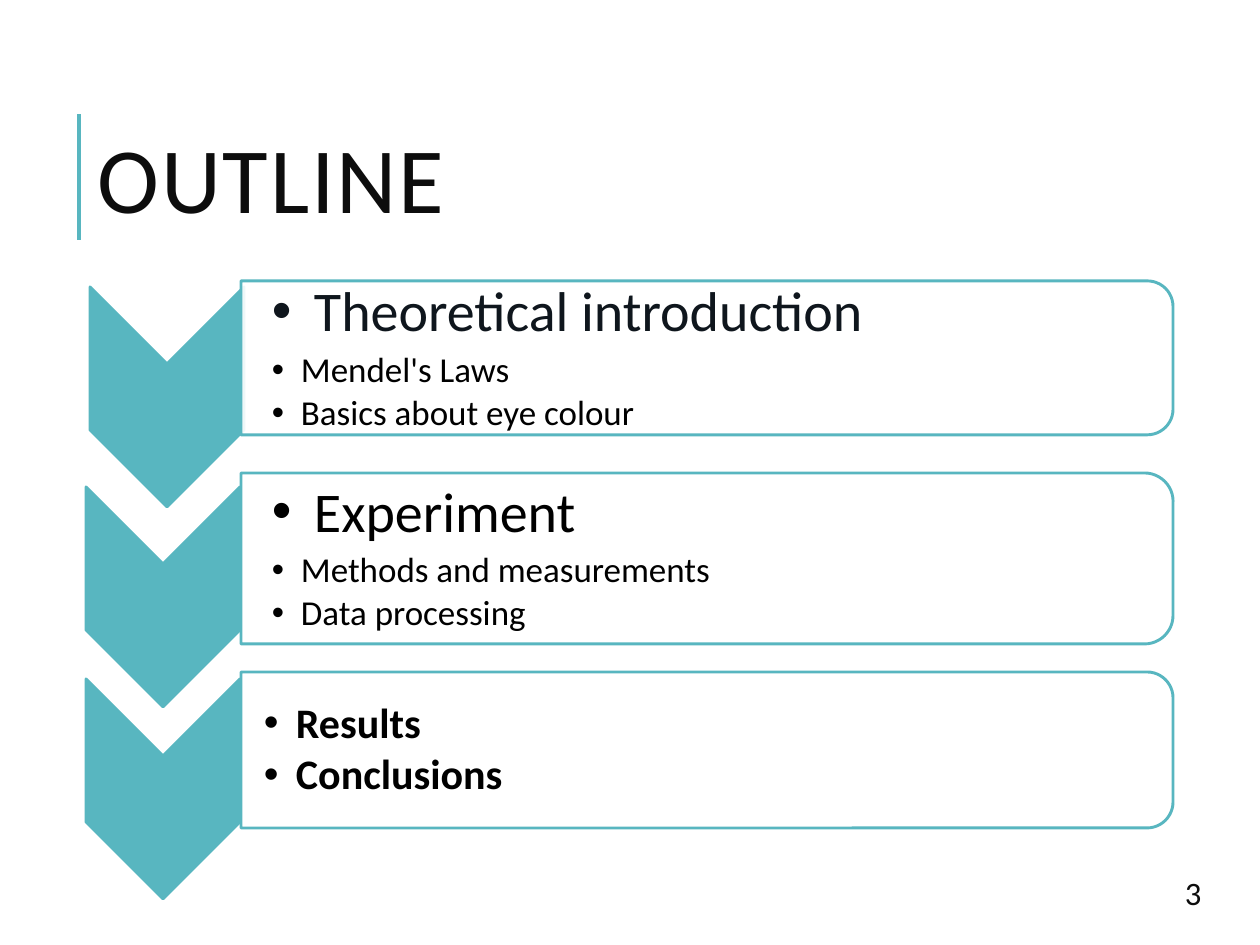
from dataclasses import dataclass

import lxml.etree
import pptx
import pptx.dml.color
import pptx.enum.shapes
import pptx.enum.text
import pptx.oxml.ns
import pptx.util

EMU_PER_PX = 914400 / 168
TEAL = pptx.dml.color.RGBColor(0x58, 0xB6, 0xC0)
WHITE = pptx.dml.color.RGBColor(0xFF, 0xFF, 0xFF)
BLACK = pptx.dml.color.RGBColor(0x00, 0x00, 0x00)
NEAR_BLACK = pptx.dml.color.RGBColor(0x0D, 0x0D, 0x0D)
NAVY_BLACK = pptx.dml.color.RGBColor(0x0F, 0x16, 0x1D)
FONT = "Calibri"
CARD_LEFT, CARD_WIDTH = 241, 932
CHEVRON_WIDTH, CHEVRON_HEIGHT = 154, 220


@dataclass
class Box:
    left: int
    top: int
    width: int
    height: int


@dataclass
class Bullet:
    text: str
    size: int
    indent: int
    color: pptx.dml.color.RGBColor = BLACK
    bold: bool = False


@dataclass
class Section:
    chevron_left: int
    chevron_top: int
    card_top: int
    card_height: int
    text_top: int
    text_height: int
    text_inset: int
    bullets: list[Bullet]


SECTIONS = [
    Section(90, 287, 281, 154, 289, 139, 32, [
        Bullet("Theoretical introduction", 24, 42, NAVY_BLACK),
        Bullet("Mendel's Laws", 15, 29),
        Bullet("Basics about eye colour", 15, 29),
    ]),
    Section(86, 487, 473, 171, 481, 155, 32, [
        Bullet("Experiment", 24, 42),
        Bullet("Methods and measurements", 15, 29),
        Bullet("Data processing", 15, 29),
    ]),
    Section(86, 679, 672, 156, 680, 141, 24, [
        Bullet("Results", 18, 32, bold=True),
        Bullet("Conclusions", 18, 32, bold=True),
    ]),
]


def px(length: float) -> pptx.util.Emu:
    return pptx.util.Emu(round(length * EMU_PER_PX))


def add_child(parent, tag: str, **attributes: str):
    return lxml.etree.SubElement(parent, pptx.oxml.ns.qn(tag), attributes)


def add_turned_shape(slide, preset, seen: Box, fill: pptx.dml.color.RGBColor):
    """Add a shape turned a quarter clockwise so that it covers the box seen."""
    shift = (seen.width - seen.height) / 2
    shape = slide.shapes.add_shape(
        preset, px(seen.left + shift), px(seen.top - shift), px(seen.height), px(seen.width))
    shape.rotation = 90
    shape.shadow.inherit = False
    shape.fill.solid()
    shape.fill.fore_color.rgb = fill
    shape.line.color.rgb = TEAL
    shape.line.width = pptx.util.Pt(1.25)
    return shape


def add_text_frame(slide, box: Box, insets: tuple[int, int], anchor):
    """Add a text box; insets are the left one and the one for the other sides."""
    frame = slide.shapes.add_textbox(
        px(box.left), px(box.top), px(box.width), px(box.height)).text_frame
    frame.word_wrap = True
    frame.vertical_anchor = anchor
    frame.margin_left = px(insets[0])
    frame.margin_top = frame.margin_right = frame.margin_bottom = px(insets[1])
    return frame


def style_font(paragraph, size: int, color: pptx.dml.color.RGBColor, bold: bool = False) -> None:
    paragraph.font.name = FONT
    paragraph.font.size = pptx.util.Pt(size)
    paragraph.font.color.rgb = color
    paragraph.font.bold = bold


def write_bullet(paragraph, bullet: Bullet) -> None:
    paragraph.text = bullet.text
    paragraph.line_spacing = 0.9
    paragraph.space_after = pptx.util.Pt(0.15 * bullet.size)
    properties = paragraph._p.get_or_add_pPr()
    properties.set("marL", str(px(bullet.indent)))
    properties.set("indent", str(px(-bullet.indent)))
    add_child(properties, "a:buFont", typeface="Arial")
    add_child(properties, "a:buChar", char="•")
    style_font(paragraph, bullet.size, bullet.color, bullet.bold)


def add_section(slide, section: Section) -> None:
    presets = pptx.enum.shapes.MSO_SHAPE
    chevron = Box(section.chevron_left, section.chevron_top, CHEVRON_WIDTH, CHEVRON_HEIGHT)
    add_turned_shape(slide, presets.CHEVRON, chevron, TEAL)

    card_box = Box(CARD_LEFT, section.card_top, CARD_WIDTH, section.card_height)
    card = add_turned_shape(slide, presets.ROUND_2_SAME_RECTANGLE, card_box, WHITE)
    card_color = card._element.spPr.find(".//" + pptx.oxml.ns.qn("a:srgbClr"))
    add_child(card_color, "a:alpha", val="90000")

    text_box = Box(240, section.text_top, 926, section.text_height)
    frame = add_text_frame(
        slide, text_box, (section.text_inset, 3), pptx.enum.text.MSO_ANCHOR.MIDDLE)
    for index, bullet in enumerate(section.bullets):
        write_bullet(frame.add_paragraph() if index else frame.paragraphs[0], bullet)


def add_heading(slide) -> None:
    rule = slide.shapes.add_connector(
        pptx.enum.shapes.MSO_CONNECTOR.STRAIGHT, px(79), px(240), px(79), px(114))
    rule.line.color.rgb = TEAL
    rule.line.width = pptx.util.Pt(1.5)
    add_child(rule._element.spPr, "a:effectLst")

    title = add_text_frame(
        slide, Box(86, 130, 1174, 79), (12, 12), pptx.enum.text.MSO_ANCHOR.TOP).paragraphs[0]
    title.text = "OUTLINE"
    title.line_spacing = 0.8
    style_font(title, 40, NEAR_BLACK)
    title.runs[0]._r.get_or_add_rPr().set("spc", "80")


def main() -> None:
    presentation = pptx.Presentation()
    presentation.slide_width = px(1260)
    presentation.slide_height = px(945)
    slide = presentation.slides.add_slide(presentation.slide_layouts[6])
    add_heading(slide)
    for section in SECTIONS:
        add_section(slide, section)
    page_number = add_text_frame(
        slide, Box(1168, 856, 76, 72), (17, 17), pptx.enum.text.MSO_ANCHOR.MIDDLE).paragraphs[0]
    page_number.text = "3"
    style_font(page_number, 14, NEAR_BLACK)
    presentation.save("out.pptx")


if __name__ == "__main__":
    main()
